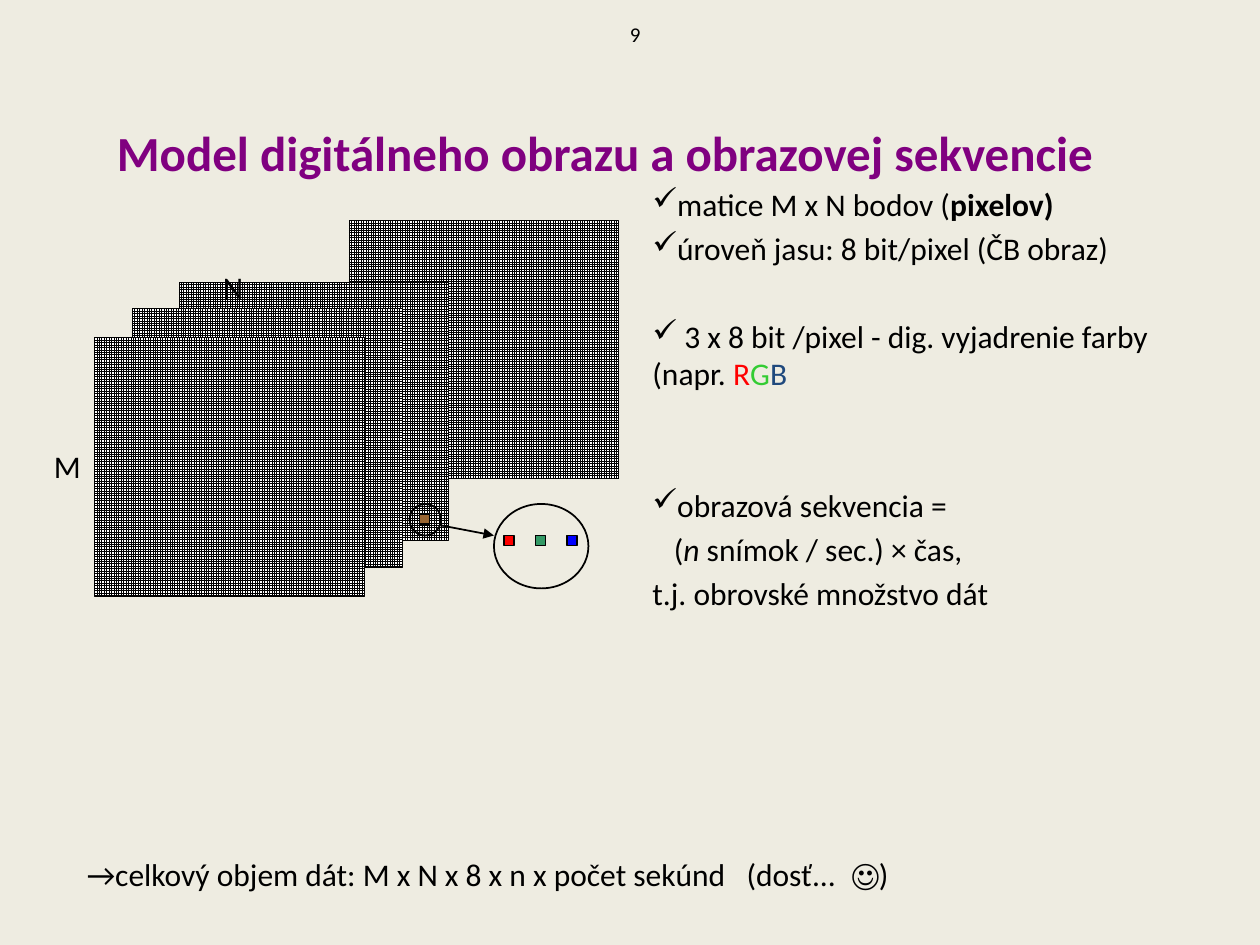
from lxml.etree import SubElement
from pptx import Presentation
from pptx.dml.color import RGBColor
from pptx.enum.dml import MSO_PATTERN
from pptx.enum.shapes import MSO_CONNECTOR, MSO_SHAPE
from pptx.oxml.ns import qn
from pptx.util import Inches, Pt

BLACK = RGBColor(0x00, 0x00, 0x00)
WHITE = RGBColor(0xFF, 0xFF, 0xFF)
CREAM = RGBColor(0xEE, 0xEC, 0xE1)
PURPLE = RGBColor(0x80, 0x00, 0x80)
BROWN = RGBColor(0x99, 0x66, 0x33)
RED = RGBColor(0xFF, 0x00, 0x00)
LIME = RGBColor(0x33, 0xCC, 0x33)
GREEN = RGBColor(0x33, 0x99, 0x66)
NAVY = RGBColor(0x1F, 0x49, 0x7D)
BLUE = RGBColor(0x00, 0x00, 0xFF)
FONT = "Calibri"

# Content: single-line labels as (text, box, size, colour, bold, left inset)
LABELS = [
    ("Model digitálneho obrazu a obrazovej sekvencie",
     (0.83, 0.92, 8.73, 0.57), 28, PURPLE, True, 0.1),
    ("M", (0.33, 3.5, 0.5, 0.5), 18, BLACK, False, 0.1),
    ("N", (1.67, 2.08, 0.5, 0.5), 18, BLACK, False, 0.1),
    ("9", (5, 0.12, 0.5, 0.3), 12, BLACK, False, 0),
    ("→celkový objem dát: M x N x 8 x n x počet sekúnd   (dosť...  ☺)",
     (0.59, 6.74, 8.98, 0.5), 18, BLACK, False, 0.1),
]

# Notes as (bulleted, lines of gap above, left margin, runs of (text, style))
NOTES_BOX = (5.08, 1.42, 4.58, 3.62)
NOTES = [
    (True, 0, 0, [("matice M x N bodov (", {}), ("pixelov)", {"bold": True})]),
    (True, 0, 0, [("úroveň jasu: 8 bit/pixel (ČB obraz)", {})]),
    (True, 1, 0, [(" 3 x 8 bit /pixel - dig. vyjadrenie farby (napr. ", {}),
                  ("R", {"color": RED}), ("G", {"color": LIME}),
                  ("B", {"color": NAVY})]),
    (True, 2, 0, [("obrazová sekvencia =", {})]),
    (False, 0, 0.17, [("(", {}), ("n", {"italic": True}),
                      (" snímok / sec.) × čas,", {})]),
    (False, 0, 0, [("t.j. obrovské množstvo dát", {})]),
]
NOTE_SPACING, NOTE_LINE = 3.5, 25  # points

# Frames of the sequence, back to front
FRAME_SIZE = (2.14, 2.05)
FRAMES = [(2.77, 1.75), (1.42, 2.24), (1.05, 2.45), (0.75, 2.68)]

PIXEL = 0.08
CHANNELS = [RED, GREEN, BLUE]
CHANNEL_START, CHANNEL_STEP = (4, 4.25), 0.25

prs = Presentation()
prs.slide_width, prs.slide_height = Inches(10), Inches(7.5)
slide = prs.slides.add_slide(prs.slide_layouts[6])
slide.background.fill.solid()
slide.background.fill.fore_color.rgb = CREAM


def add_outlined(shapes, kind, box, line_width=1, color=None):
    shape = shapes.add_shape(kind, *map(Inches, box))
    shape.shadow.inherit = False
    shape.line.color.rgb = BLACK
    shape.line.width = Pt(line_width)
    if color is None:
        shape.fill.background()
    else:
        shape.fill.solid()
        shape.fill.fore_color.rgb = color
    return shape


def add_pixel(shapes, left, top, color):
    add_outlined(shapes, MSO_SHAPE.RECTANGLE, (left, top, PIXEL, PIXEL), color=color)


def add_text_frame(box, left_inset=0.1):
    frame = slide.shapes.add_textbox(*map(Inches, box)).text_frame
    frame.word_wrap = True
    frame.margin_left = Inches(left_inset)
    return frame


def style_run(run, size=18, color=BLACK, bold=False, italic=False):
    font = run.font
    font.name, font.size = FONT, Pt(size)
    font.bold, font.italic = bold, italic
    font.color.rgb = color


# Stack of image frames
stack = slide.shapes.add_group_shape().shapes
for corner in FRAMES:
    image_frame = add_outlined(stack, MSO_SHAPE.RECTANGLE, corner + FRAME_SIZE, 0.3)
    image_frame.fill.patterned()
    image_frame.fill.pattern = MSO_PATTERN.SMALL_GRID
    image_frame.fill.fore_color.rgb = BLACK
    image_frame.fill.back_color.rgb = WHITE

# Title, axis letters, page number and conclusion
for text, box, size, color, bold, inset in LABELS:
    label = add_text_frame(box, inset)
    label.text = text
    style_run(label.paragraphs[0].runs[0], size, color, bold)

# Notes
notes = add_text_frame(NOTES_BOX)
for index, (bulleted, gap_lines, margin, runs) in enumerate(NOTES):
    note = notes.add_paragraph() if index else notes.paragraphs[0]
    note.space_before = Pt(NOTE_SPACING + gap_lines * NOTE_LINE)
    props = note._p.get_or_add_pPr()
    props.set("marL", str(Inches(margin)))
    props.set("indent", "0")
    if bulleted:
        SubElement(props, qn("a:buChar")).set("char", "✓")
    for text, style in runs:
        run = note.add_run()
        run.text = text
        style_run(run, **style)

# One pixel, pointing to its colour channels
add_pixel(slide.shapes, 3.33, 4.08, BROWN)
arrow = slide.shapes.add_connector(
    MSO_CONNECTOR.STRAIGHT, *map(Inches, (3.5, 4.17, 3.92, 4.25)))
arrow.line.color.rgb = BLACK
arrow.line.width = Pt(1)
SubElement(arrow.line._get_or_add_ln(), qn("a:tailEnd")).set("type", "triangle")
SubElement(arrow._element.spPr, qn("a:effectLst"))
add_outlined(slide.shapes, MSO_SHAPE.OVAL, (3.25, 4, 0.25, 0.25))

# Magnified channels
magnified = slide.shapes.add_group_shape().shapes
channel_left, channel_top = CHANNEL_START
for index, color in enumerate(CHANNELS):
    add_pixel(magnified, channel_left + index * CHANNEL_STEP, channel_top, color)
add_outlined(magnified, MSO_SHAPE.OVAL, (3.92, 4, 0.75, 0.67))

prs.save("out.pptx")
